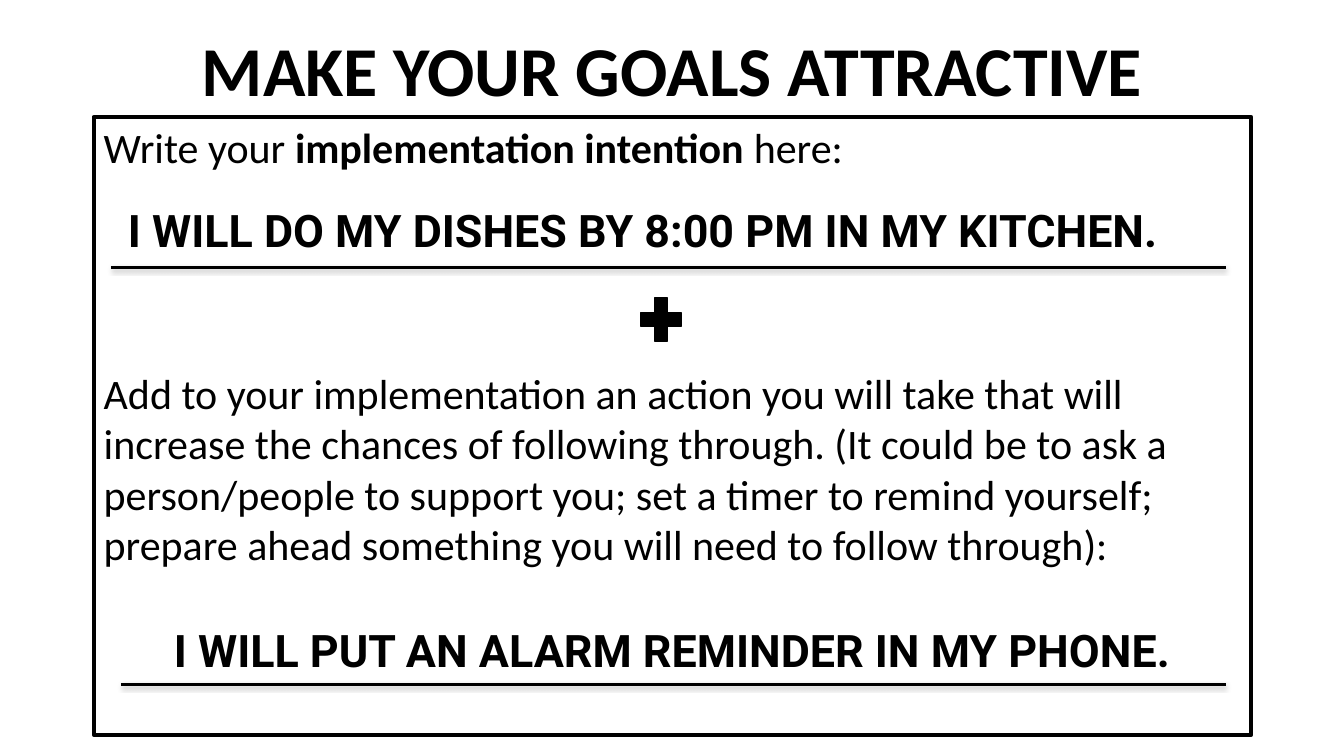
import pptx
import pptx.util
import pptx.dml.color
import pptx.enum.shapes
import pptx.enum.text
import pptx.oxml

BLACK = pptx.dml.color.RGBColor(0, 0, 0)
SHAPE = pptx.enum.shapes.MSO_SHAPE
ALIGN = pptx.enum.text.PP_ALIGN
ANCHOR = pptx.enum.text.MSO_ANCHOR
PX = 9144  # EMU, 100 px to the inch

SHADOW = (
    '<a:effectLst xmlns:a="http://schemas.openxmlformats.org/drawingml/2006/main">'
    '<a:outerShdw blurRad="40000" dist="20000" dir="5400000" rotWithShape="0">'
    '<a:srgbClr val="000000"><a:alpha val="38000"/></a:srgbClr>'
    '</a:outerShdw></a:effectLst>'
)


class Page:
    """Holds the style and the current slide."""

    font = "Calibri"
    ink = BLACK

    def __init__(self, slide):
        self.items = slide.shapes

    def fill_text(self, shape, paras, anchor):
        """Each paragraph is a pair: format values, list of (text, font values)."""
        frame = shape.text_frame
        frame.word_wrap = True
        frame.vertical_anchor = anchor
        for i, (form, runs) in enumerate(paras):
            para = frame.add_paragraph() if i else frame.paragraphs[0]
            form = {"alignment": ALIGN.LEFT, **form}
            indent = form.pop("indent", 0)
            for key, val in form.items():
                setattr(para, key, val)
            if indent:
                para._p.get_or_add_pPr().set("marL", str(indent * PX))
            for text, look in runs:
                run = para.add_run()
                run.text = text
                run.font.color.rgb = self.ink
                for key, val in {"name": self.font, **look}.items():
                    setattr(run.font, key, val)

    def label(self, box, paras):
        shape = self.items.add_textbox(*(n * PX for n in box))
        self.fill_text(shape, paras, ANCHOR.MIDDLE)

    def shape(self, kind, box, width, fill=None):
        shape = self.items.add_shape(kind, *(n * PX for n in box))
        shape.shadow.inherit = False
        if fill is None:
            shape.fill.background()
        else:
            shape.fill.solid()
            shape.fill.fore_color.rgb = fill
        shape.line.color.rgb = self.ink
        shape.line.width = pptx.util.Pt(width)
        return shape

    def rule(self, left, right, y):
        line = self.items.add_connector(
            pptx.enum.shapes.MSO_CONNECTOR.STRAIGHT,
            left * PX, y * PX, right * PX, y * PX)
        line.line.color.rgb = self.ink
        line.line.width = pptx.util.Pt(2)
        line._element.spPr.append(pptx.oxml.parse_xml(SHADOW))


def main():
    deck = pptx.Presentation()
    deck.slide_width, deck.slide_height = 1333 * PX, 750 * PX
    page = Page(deck.slides.add_slide(deck.slide_layouts[6]))
    pt = pptx.util.Pt

    head = {"size": pt(50), "bold": True}
    body = {"size": pt(30)}
    strong = {**body, "bold": True}
    reply = {"size": pt(32), "bold": True, "name": "Roboto"}

    # Title
    page.label((177, 21, 980, 94), [
        ({"alignment": ALIGN.CENTER}, [("MAKE YOUR GOALS ATTRACTIVE", head)]),
    ])

    # Framed prompts and answers
    frame = page.shape(SHAPE.RECTANGLE, (93, 116, 1148, 613), 3)
    page.fill_text(frame, [
        ({}, [("Write your ", body), ("implementation intention", strong),
              (" here:", body)]),
        ({"space_before": pt(22), "indent": 24},
         [("I WILL DO MY DISHES BY 8:00 PM IN MY KITCHEN.", reply)]),
        ({"space_before": pt(79)},
         [("Add to your implementation an action you will take that will "
           "increase the chances of following through. (It could be to ask a "
           "person/people to support you; set a timer to remind yourself; "
           "prepare ahead something you will need to follow through):", body)]),
        ({"space_before": pt(38), "alignment": ALIGN.CENTER},
         [("I WILL PUT AN ALARM REMINDER IN MY PHONE.", reply)]),
    ], ANCHOR.TOP)

    # Plus sign between the two parts
    page.shape(SHAPE.MATH_PLUS, (628, 288, 55, 58), 1, BLACK)

    # Answer lines
    for left, y in ((110, 265), (120, 679)):
        page.rule(left, 1216, y)

    deck.save("out.pptx")


if __name__ == "__main__":
    main()
